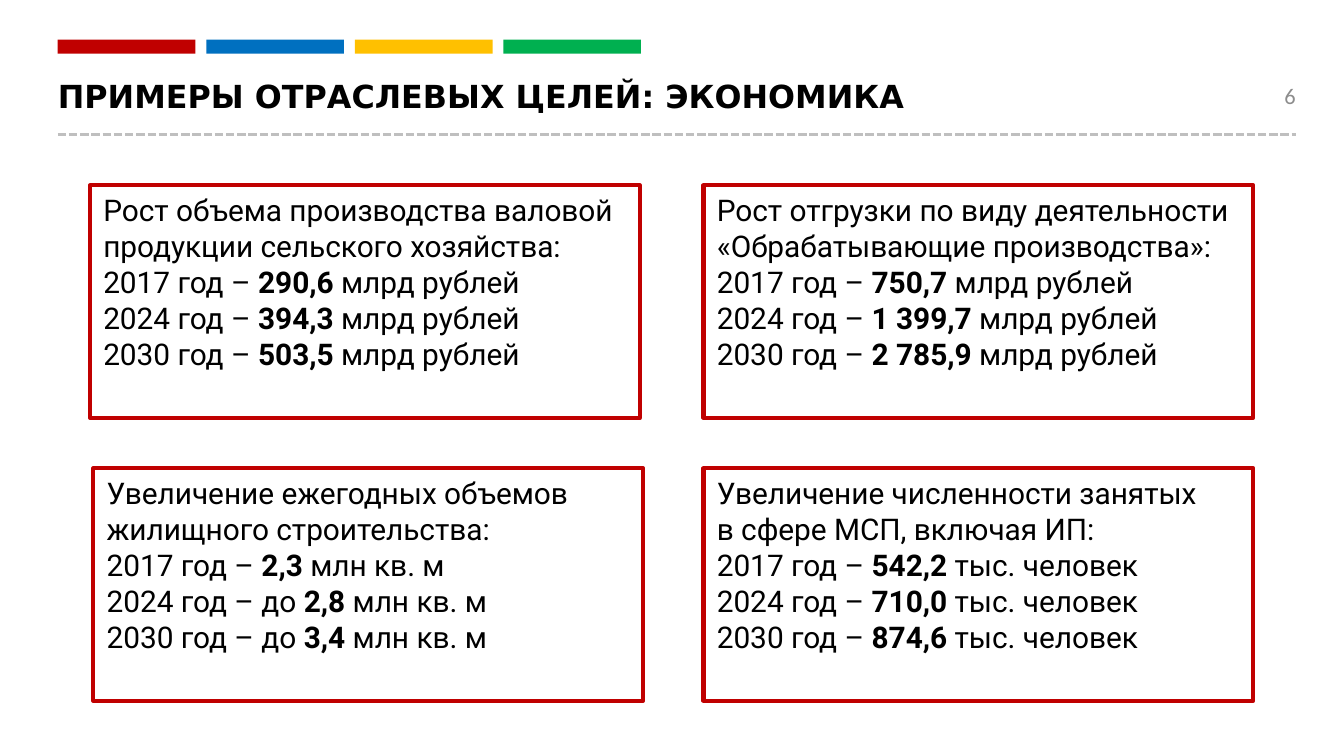
from lxml import etree
from pptx import Presentation
from pptx.dml.color import RGBColor
from pptx.enum import dml, shapes, text
from pptx.oxml.ns import qn
from pptx.util import Emu, Pt

PX = 4572  # 200 px to the inch
COLORS = {"red": "C00000", "blue": "0070C0", "yellow": "FFC000", "green": "00B050",
          "rule": "BFBFBF", "number": "8C8C8C", "text": "000000"}

GOALS = [
    ((134, 276), "Рост объема производства валовой продукции сельского хозяйства:",
     ["290,6", "394,3", "503,5"], "млрд рублей", ""),
    ((1047, 276), "Рост отгрузки по виду деятельности «Обрабатывающие производства»:",
     ["750,7", "1 399,7", "2 785,9"], "млрд рублей", ""),
    ((139, 697), "Увеличение ежегодных объемов жилищного строительства:",
     ["2,3", "2,8", "3,4"], "млн кв. м", "до "),
    ((1047, 697), "Увеличение численности занятых\nв сфере МСП, включая ИП:",
     ["542,2", "710,0", "874,6"], "тыс. человек", ""),
]
YEARS = [2017, 2024, 2030]


def px(*lengths):
    return [Emu(n * PX) for n in lengths]


def rgb(name):
    return RGBColor.from_string(COLORS[name])


def set_font(p, name, size, color="text", bold=False):
    p.font.name, p.font.size, p.font.bold = name, Pt(size), bold
    p.font.color.rgb = rgb(color)


def add_color_bars(slide, x, y, w, h, pitch):
    group = slide.shapes.add_group_shape()
    for i, color in enumerate(["red", "blue", "yellow", "green"]):
        sp = group.shapes.add_shape(shapes.MSO_SHAPE.RECTANGLE, *px(x + i * pitch, y, w, h))
        sp.shadow.inherit = False
        sp.fill.solid()
        sp.fill.fore_color.rgb = rgb(color)
        sp.line.fill.background()


def add_header(slide, x, y, w, h):
    # Title
    title = slide.shapes.title
    title.left, title.top, title.width, title.height = px(x, y, w - 71, h)
    tf = title.text_frame
    tf.margin_left = tf.margin_top = tf.margin_right = tf.margin_bottom = 0
    tf.auto_size = text.MSO_AUTO_SIZE.NONE
    tf.vertical_anchor = text.MSO_ANCHOR.MIDDLE
    p = tf.paragraphs[0]
    p.text = "ПРИМЕРЫ ОТРАСЛЕВЫХ ЦЕЛЕЙ: ЭКОНОМИКА"
    p.alignment = text.PP_ALIGN.LEFT
    set_font(p, "DejaVu Sans", 17, bold=True)

    # Dashed rule
    rule = slide.shapes.add_connector(
        shapes.MSO_CONNECTOR.STRAIGHT, *px(x, y + 86, x + w, y + 86))
    rule.line.color.rgb = rgb("rule")
    rule.line.width = Pt(1.5)
    rule.line.dash_style = dml.MSO_LINE.SQUARE_DOT
    etree.SubElement(rule._element.spPr, qn("a:effectLst"))

    # Page number
    tf = slide.shapes.add_textbox(*px(x + w - 415, y - 2, 434, 60)).text_frame
    tf.word_wrap = True
    tf.vertical_anchor = text.MSO_ANCHOR.MIDDLE
    p = tf.paragraphs[0]
    p.text = "6"
    p.alignment = text.PP_ALIGN.RIGHT
    set_font(p, "Calibri", 12, "number")


def add_goal(slide, x, y, w, h, heading, values, unit, prefix):
    sp = slide.shapes.add_shape(shapes.MSO_SHAPE.RECTANGLE, *px(x, y, w, h))
    sp.shadow.inherit = False
    sp.fill.background()
    sp.line.color.rgb = rgb("red")
    sp.line.width = Pt(2.25)

    tf = sp.text_frame
    tf.word_wrap = True
    tf.vertical_anchor = text.MSO_ANCHOR.TOP
    tf.paragraphs[0].text = heading
    for i, (year, value) in enumerate(zip(YEARS, values)):
        p = tf.add_paragraph()
        p.add_run().text = f"{year} год – {prefix if i else ''}"
        r = p.add_run()
        r.text = value
        r.font.bold = True
        p.add_run().text = f" {unit}"
    for p in tf.paragraphs:
        p.alignment = text.PP_ALIGN.LEFT
        set_font(p, "Roboto", 16)


def main():
    prs = Presentation()
    prs.slide_width, prs.slide_height = px(2000, 1125)
    slide = prs.slides.add_slide(prs.slide_layouts[5])
    add_color_bars(slide, 86, 59, 205, 21, pitch=221)
    add_header(slide, 86, 114, 1843, 58)
    for (x, y), *goal in GOALS:
        add_goal(slide, x, y, 818, 346, *goal)
    prs.save("out.pptx")


if __name__ == "__main__":
    main()
